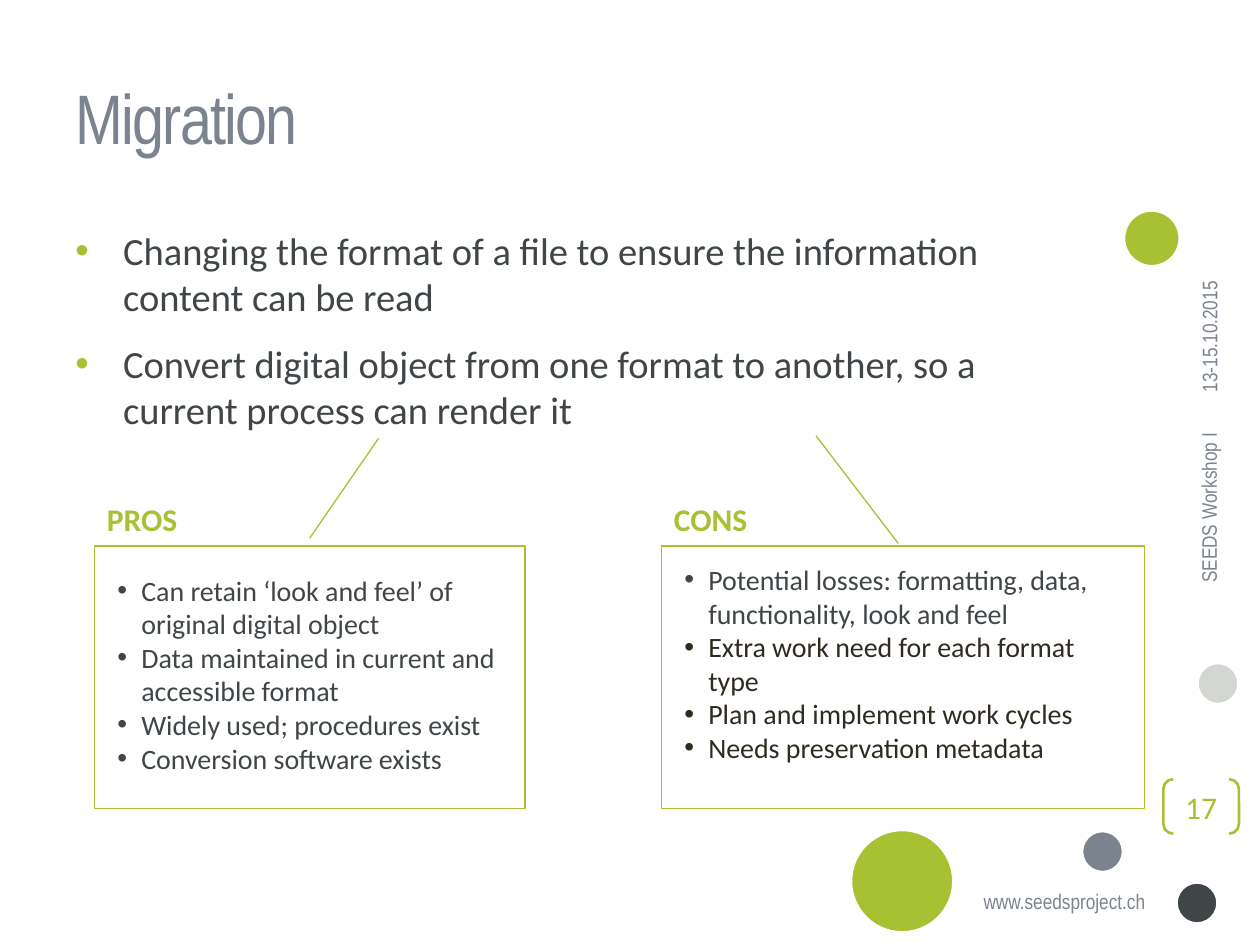
from lxml.etree import SubElement
from pptx import Presentation
from pptx.dml.color import RGBColor
from pptx.enum.shapes import MSO_SHAPE
from pptx.enum.text import MSO_ANCHOR, MSO_AUTO_SIZE, PP_ALIGN
from pptx.oxml.ns import qn
from pptx.util import Inches, Pt

LIME, SLATE, DARK, PALE = "A7C133", "7B838F", "404548", "D4D6D2"
INK, WHITE = "2F2B20", "FFFFFF"
HEAD, BODY = "Arial Narrow", "Calibri"


def paint(tone):
    return RGBColor.from_string(tone)


def bullet(para, indent, tone):
    props = para._p.get_or_add_pPr()
    props.set("marL", str(Inches(indent)))
    props.set("indent", str(-Inches(indent)))
    if tone:
        SubElement(SubElement(props, qn("a:buClr")), qn("a:srgbClr"), val=tone)
    SubElement(props, qn("a:buFont"), typeface="Arial")
    SubElement(props, qn("a:buChar"), char="•")


def write(shape, *lines, size=16, font=BODY, tone=DARK, bold=False, align=PP_ALIGN.LEFT,
          anchor=MSO_ANCHOR.TOP, wrap=True, grow=False, indent=0, dot=None, gap=0, track=0):
    """Fill a shape with paragraphs; a line is text or a (text, colour) pair."""
    frame = shape.text_frame
    frame.word_wrap = wrap
    frame.vertical_anchor = anchor
    frame.auto_size = MSO_AUTO_SIZE.SHAPE_TO_FIT_TEXT if grow else MSO_AUTO_SIZE.NONE
    for i, line in enumerate(lines):
        words, ink = line if isinstance(line, tuple) else (line, tone)
        para = frame.paragraphs[0] if i == 0 else frame.add_paragraph()
        para.alignment = align
        para.space_before = Pt(gap if i else 0)
        if indent:
            bullet(para, indent, dot)
        run = para.add_run()
        run.text = words
        run.font.size, run.font.name, run.font.bold = Pt(size), font, bold
        run.font.color.rgb = paint(ink)
        if track:
            run._r.get_or_add_rPr().set("spc", str(track))
    return shape


class Deck:
    """Places elements on a grid of 120 columns by 90 rows."""
    COLS, ROWS = 120, 90

    def __init__(self):
        self.prs = Presentation()
        self.prs.slide_width, self.prs.slide_height = Inches(10), Inches(7.5)
        self.slide = self.prs.slides.add_slide(self.prs.slide_layouts[5])

    def area(self, col, row, wide, high):
        x, y = self.prs.slide_width / self.COLS, self.prs.slide_height / self.ROWS
        return [int(n) for n in (col * x, row * y, wide * x, high * y)]

    def title(self, words, *cell, **style):
        shape = self.slide.shapes.title
        shape.left, shape.top, shape.width, shape.height = self.area(*cell)
        write(shape, words, **style)

    def text(self, cell, *lines, turn=0, **style):
        box = self.slide.shapes.add_textbox(*self.area(*cell))
        box.rotation = turn
        return write(box, *lines, **style)

    def shape(self, kind, cell, fill=None, line=WHITE, width=2, adjust=()):
        item = self.slide.shapes.add_shape(kind, *self.area(*cell))
        item.shadow.inherit = False
        if fill:
            item.fill.solid()
            item.fill.fore_color.rgb = paint(fill)
        else:
            item.fill.background()
        item.line.color.rgb, item.line.width = paint(line), Pt(width)
        for i, share in enumerate(adjust):
            item.adjustments[i] = share
        return item

    def circle(self, col, row, size, fill):
        self.shape(MSO_SHAPE.OVAL, (col, row, size, size), fill)

    def panel(self, head, col, wide, adjust, inner, lines):
        top, high = 52, 25
        self.shape(MSO_SHAPE.LINE_CALLOUT_1, (col, top, wide, high), WHITE, LIME, 0.75, adjust)
        self.text(inner, *lines, indent=0.19, grow=True)
        self.text((col, 47, 9.4, 4.8), head, size=18, tone=LIME, bold=True, wrap=False, grow=True)


def main():
    deck = Deck()

    # Circles
    for col, row, size, fill in [(81, 79, 9.84, LIME), (107, 20, 5.4, LIME),
                                 (112, 84, 4, DARK), (114, 63.1, 4, PALE),
                                 (103, 79.1, 4, SLATE)]:
        deck.circle(col, row, size, fill)

    # Footer, page number and side notes
    small = dict(size=12, font=HEAD, tone=SLATE)
    deck.text((92.5, 84, 18.5, 3.6), "www.seedsproject.ch", wrap=False, grow=True, **small)
    page = deck.shape(MSO_SHAPE.DOUBLE_BRACKET, (110.8, 74.2, 7.2, 5.2), None, LIME, 1.5, [0.18])
    frame = page.text_frame
    frame.margin_left = frame.margin_right = frame.margin_top = frame.margin_bottom = 0
    write(page, "17", size=18, tone=LIME, align=PP_ALIGN.CENTER, anchor=MSO_ANCHOR.MIDDLE)
    side = dict(turn=270, anchor=MSO_ANCHOR.MIDDLE, **small)
    deck.text((104.6, 48.4, 21, 4.3), "SEEDS Workshop I", align=PP_ALIGN.RIGHT, **side)
    deck.text((107.4, 28.8, 15.5, 4), "13-15.10.2015", **side)

    # Title and main points
    deck.title("Migration", 6, 3.6, 96, 15, size=40, font=HEAD, tone=SLATE,
               anchor=MSO_ANCHOR.MIDDLE, track=-100)
    deck.text((6, 21, 96, 63),
              "Changing the format of a file to ensure the information content can be read",
              "Convert digital object from one format to another, so a current process can render it",
              size=22, indent=0.38, dot=LIME, gap=12)

    # Pros and cons
    deck.panel("PROS", 9, 41, (-0.03, 0.5, -0.41, 0.66), (10, 54, 39, 20.6), [
        "Can retain ‘look and feel’ of original digital object",
        "Data maintained in current and accessible format",
        "Widely used; procedures exist",
        "Conversion software exists"])
    deck.panel("CONS", 63, 46, (-0.01, 0.49, -0.42, 0.32), (64, 53, 43, 30.2), [
        "Potential losses: formatting, data, functionality, look and feel",
        ("Extra work need for each format type", INK),
        ("Plan and implement work cycles", INK),
        ("Needs preservation metadata", INK)])

    deck.prs.save("out.pptx")


if __name__ == "__main__":
    main()
